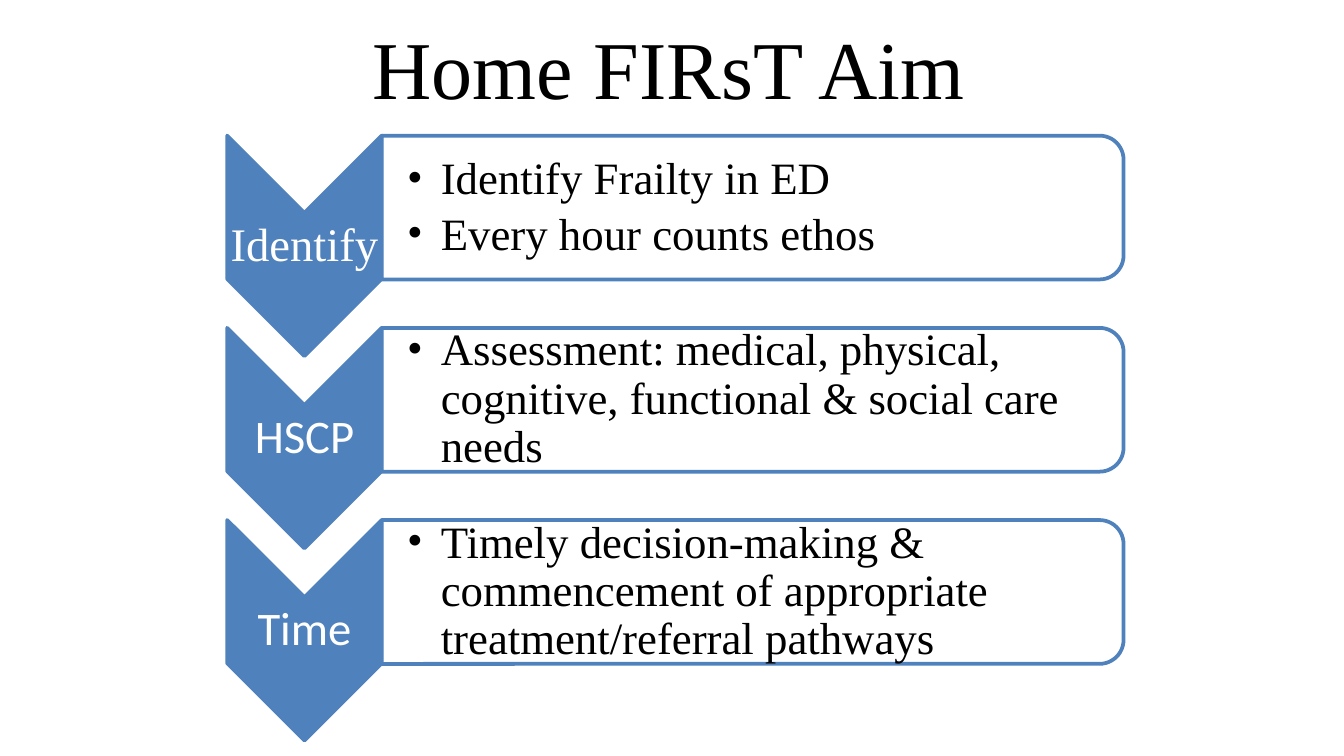
from lxml import etree
from pptx import Presentation
from pptx.dml.color import RGBColor
from pptx.enum.shapes import MSO_SHAPE
from pptx.enum.text import MSO_ANCHOR, PP_ALIGN
from pptx.oxml.ns import qn
from pptx.util import Inches, Pt

CHEVRON = MSO_SHAPE.CHEVRON
ROUNDED_PANEL = MSO_SHAPE.ROUND_2_SAME_RECTANGLE
MIDDLE = MSO_ANCHOR.MIDDLE
CENTER, LEFT = PP_ALIGN.CENTER, PP_ALIGN.LEFT

BLUE = RGBColor(0x4F, 0x81, 0xBD)
WHITE = RGBColor(0xFF, 0xFF, 0xFF)
BLACK = RGBColor(0x00, 0x00, 0x00)
SERIF, SANS = "Times New Roman", "Calibri"

CHEVRON_WIDTH, CHEVRON_HEIGHT = 1.15, 1.64
PANEL_HEIGHT = 1.07
ROW_PITCH = 1.43

STEPS = [
    ("Identify", SERIF, ["Identify Frailty in ED", "Every hour counts ethos"]),
    ("HSCP", SANS, ["Assessment: medical, physical, cognitive, functional & social care needs"]),
    ("Time", SANS, ["Timely decision-making & commencement of appropriate treatment/referral pathways"]),
]


def set_attributes(target, values):
    for name, value in values.items():
        setattr(target, name, value)


def add_bullet(paragraph):
    properties = paragraph._p.get_or_add_pPr()
    properties.set("marL", str(Inches(0.25)))
    properties.set("indent", str(-Inches(0.25)))
    etree.SubElement(properties, qn("a:buFont")).set("typeface", SERIF)
    etree.SubElement(properties, qn("a:buChar")).set("char", "•")


def add_text(slide, box, lines, font, paragraph_format, margins, bulleted=False):
    shape = slide.shapes.add_textbox(*map(Inches, box))
    frame = shape.text_frame
    left, other = map(Inches, margins)
    set_attributes(frame, {
        "word_wrap": True, "vertical_anchor": MIDDLE, "margin_left": left,
        "margin_top": other, "margin_right": other, "margin_bottom": other,
    })
    color = font["color"]
    font_values = {"name": font["name"], "size": Pt(font["size"])}
    for index, line in enumerate(lines):
        paragraph = frame.paragraphs[0] if index == 0 else frame.add_paragraph()
        if bulleted:
            add_bullet(paragraph)
        set_attributes(paragraph, paragraph_format)
        run = paragraph.add_run()
        run.text = line
        set_attributes(run.font, font_values)
        run.font.color.rgb = color


def add_turned_shape(slide, kind, box, color, opacity=100):
    left, top, width, height = box
    shape = slide.shapes.add_shape(
        kind,
        Inches(left + (width - height) / 2),
        Inches(top + (height - width) / 2),
        Inches(height),
        Inches(width),
    )
    shape.rotation = 90
    shape.shadow.inherit = False
    shape.fill.solid()
    shape.fill.fore_color.rgb = color
    if opacity < 100:
        color_element = shape._element.spPr.find(qn("a:solidFill"))[0]
        etree.SubElement(color_element, qn("a:alpha")).set("val", str(opacity * 1000))
    shape.line.color.rgb = BLUE
    shape.line.width = Pt(2)


def add_title(slide, box):
    font = {"name": SERIF, "size": 44, "color": BLACK}
    add_text(slide, box, ["Home FIRsT Aim"], font, {"alignment": CENTER}, (0.05, 0.05))


def add_step(slide, box, label, label_font, bullets):
    left, top, width, height = box
    panel_left = left + CHEVRON_WIDTH
    panel_width = width - CHEVRON_WIDTH

    add_turned_shape(slide, CHEVRON, (left, top, CHEVRON_WIDTH, height), BLUE)
    add_text(
        slide, (left, top + CHEVRON_WIDTH / 2, CHEVRON_WIDTH, height - CHEVRON_WIDTH), [label],
        {"name": label_font, "size": 25, "color": WHITE},
        {"alignment": CENTER, "line_spacing": 0.9}, (0.02, 0.02),
    )
    add_turned_shape(
        slide, ROUNDED_PANEL, (panel_left, top, panel_width, PANEL_HEIGHT), WHITE, opacity=90
    )
    add_text(
        slide, (panel_left, top + 0.05, panel_width - 0.05, PANEL_HEIGHT - 0.1), bullets,
        {"name": SERIF, "size": 24, "color": BLACK},
        {"alignment": LEFT, "level": 1, "line_spacing": 0.9, "space_after": Pt(4)},
        (0.19, 0.02), bulleted=True,
    )


def add_steps(slide, box):
    left, top, width = box
    for index, step in enumerate(STEPS):
        add_step(slide, (left, top + index * ROW_PITCH, width, CHEVRON_HEIGHT), *step)


def main():
    presentation = Presentation()
    presentation.slide_width = Inches(10)
    presentation.slide_height = presentation.slide_width * 9 // 16
    slide = presentation.slides.add_slide(presentation.slide_layouts[6])
    add_title(slide, (0.5, 0.06, 8.95, 0.87))
    add_steps(slide, (1.69, 1.01, 6.67))
    presentation.save("out.pptx")


if __name__ == "__main__":
    main()
